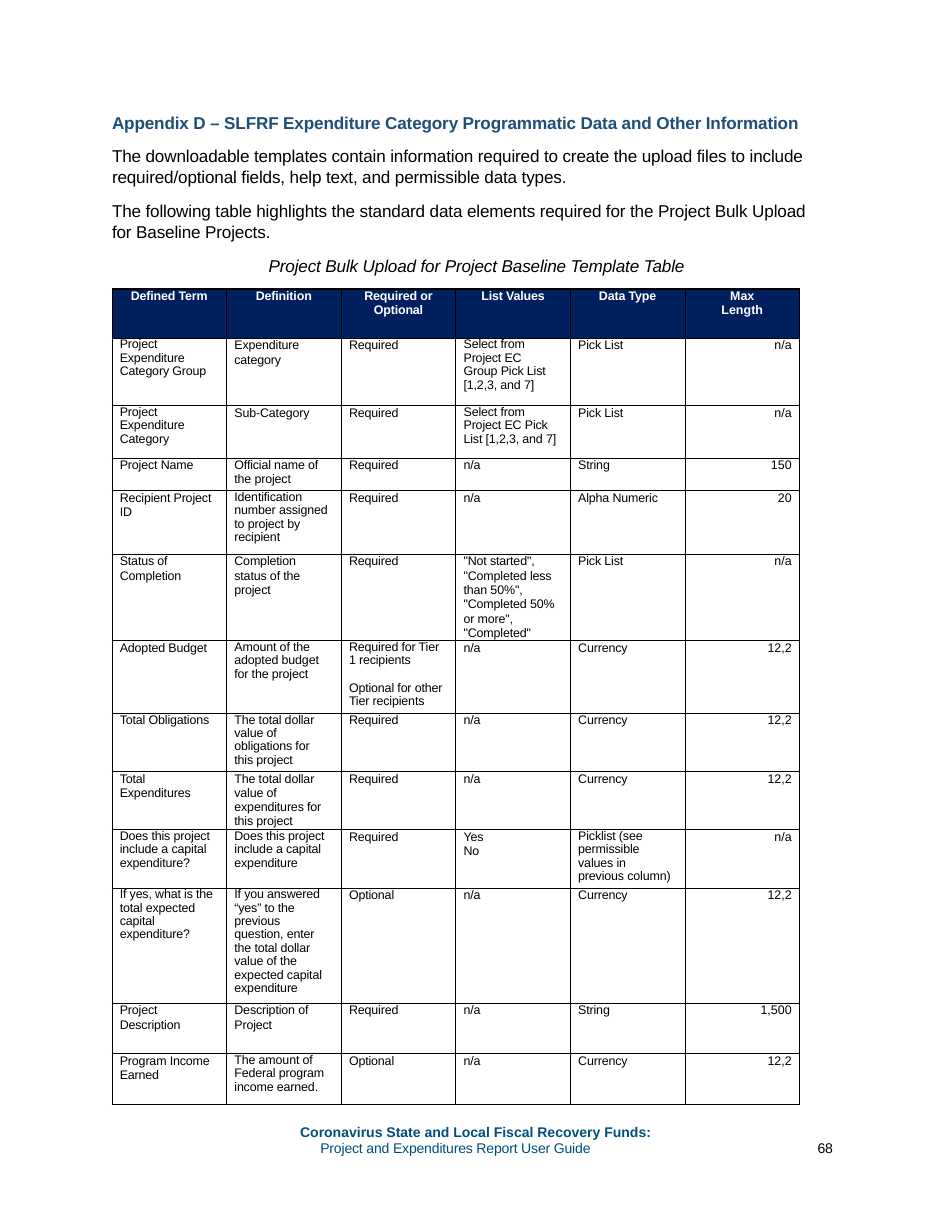
from copy import deepcopy
from pptx import Presentation, util as u
from pptx.dml.color import RGBColor
from pptx.enum import text
from pptx.oxml import parse_xml
from pptx.oxml.ns import nsdecls, qn

LEFT, CENTER, RIGHT = text.PP_ALIGN.LEFT, text.PP_ALIGN.CENTER, text.PP_ALIGN.RIGHT
COLS, ROWS, UNIT = 85, 110, u.Inches(0.1)


class Theme:
    """Colours, font and type sizes of the guide."""
    font = "Arial"
    heading, footer, header_fill = "1F4E79", "004E7C", "001F5F"
    ink, paper = "000000", "FFFFFF"
    body, note, cell = 11, 9, 8
    thin, thick = 0.5, 1


HEADING = "Appendix D – SLFRF Expenditure Category Programmatic Data and Other Information"
INTRO = [
    "The downloadable templates contain information required to create the upload files "
    "to include required/optional fields, help text, and permissible data types.",
    "The following table highlights the standard data elements required for the "
    "Project Bulk Upload for Baseline Projects.",
]
CAPTION = "Project Bulk Upload for Project Baseline Template Table"
HEADERS = ["Defined Term", "Definition", "Required or\vOptional", "List Values",
           "Data Type", "Max\vLength"]
ELEMENTS = [
    (6, ["Project\vExpenditure\vCategory Group", "Expenditure\vcategory", "Required",
         "Select from\vProject EC\vGroup Pick List\v[1,2,3, and 7]", "Pick List", "n/a"]),
    (4.7, ["Project\vExpenditure\vCategory", "Sub-Category", "Required",
           "Select from\vProject EC Pick\vList [1,2,3, and 7]", "Pick List", "n/a"]),
    (2.9, ["Project Name", "Official name of\vthe project", "Required", "n/a", "String", "150"]),
    (5.7, ["Recipient Project\vID", "Identification\vnumber assigned\vto project by\vrecipient",
           "Required", "n/a", "Alpha Numeric", "20"]),
    (7.7, ["Status of\vCompletion", "Completion\vstatus of the\vproject", "Required",
           "\"Not started\",\v\"Completed less\vthan 50%\",\n\"Completed 50%\vor more\",\n"
           "\"Completed\"", "Pick List", "n/a"]),
    (6.5, ["Adopted Budget", "Amount of the\vadopted budget\vfor the project",
           "Required for Tier\v1 recipients\nOptional for other\vTier recipients",
           "n/a", "Currency", "12,2"]),
    (5.2, ["Total Obligations", "The total dollar\vvalue of\vobligations for\vthis project",
           "Required", "n/a", "Currency", "12,2"]),
    (5.2, ["Total\vExpenditures", "The total dollar\vvalue of\vexpenditures for\vthis project",
           "Required", "n/a", "Currency", "12,2"]),
    (5.2, ["Does this project\vinclude a capital\vexpenditure?",
           "Does this project\vinclude a capital\vexpenditure", "Required", "Yes\vNo",
           "Picklist (see\vpermissible\vvalues in\vprevious column)", "n/a"]),
    (10.3, ["If yes, what is the\vtotal expected\vcapital\vexpenditure?",
            "If you answered\v“yes” to the\vprevious\vquestion, enter\vthe total dollar\v"
            "value of the\vexpected capital\vexpenditure", "Optional", "n/a", "Currency", "12,2"]),
    (4.5, ["Project\vDescription", "Description of\vProject", "Required", "n/a",
           "String", "1,500"]),
    (4.5, ["Program Income\vEarned", "The amount of\vFederal program\vincome earned.",
           "Optional", "n/a", "Currency", "12,2"]),
]


def place(box):
    """Turn a box in grid units into slide lengths."""
    return [round(v * UNIT) for v in box]


def write(p, words, size, color=Theme.ink, bold=False, italic=False, align=LEFT,
          before=0, spacing=None, indent=0, tracking=0):
    """Fill a paragraph with formatted text."""
    pPr = p._p.get_or_add_pPr()
    pPr.set("marL", str(u.Inches(indent)))
    pPr.set("indent", "0")
    p.text = words
    p.alignment, p.space_before, p.line_spacing = align, u.Pt(before), spacing
    for r in p.runs:
        f = r.font
        f.name, f.size, f.bold, f.italic = Theme.font, u.Pt(size), bold, italic
        f.color.rgb = RGBColor.from_string(color)
        if tracking:
            r._r.get_or_add_rPr().set("spc", str(tracking))
    for br in p._p.findall(qn("a:br")):
        br.append(deepcopy(p.runs[0]._r.rPr))


def frame(sp):
    """Strip a shape's margins and return its text frame."""
    tf = sp.text_frame
    tf.margin_left = tf.margin_right = tf.margin_top = tf.margin_bottom = 0
    tf.word_wrap, tf.auto_size = True, text.MSO_AUTO_SIZE.NONE
    tf.vertical_anchor = text.MSO_ANCHOR.TOP
    return tf


def add_heading(s, box):
    """Place the appendix title."""
    sp = s.shapes.title
    sp.left, sp.top, sp.width, sp.height = place(box)
    write(frame(sp).paragraphs[0], HEADING, Theme.body, Theme.heading, bold=True,
          spacing=1.0, indent=0.01, tracking=-10)


def add_intro(s, box):
    """Place the introduction and the table caption."""
    tf = frame(s.shapes.add_textbox(*place(box)))
    for i, words in enumerate(INTRO):
        p = tf.add_paragraph() if i else tf.paragraphs[0]
        write(p, words, Theme.body, spacing=1.04, before=8 if i else 0, indent=0.01,
              tracking=-10)
    write(tf.add_paragraph(), CAPTION, Theme.body, italic=True, align=CENTER,
          before=8.4, indent=0.18, tracking=-10)


def draw_borders(cell, edges):
    """Outline a cell, given a width in points for each edge."""
    tcPr = cell._tc.get_or_add_tcPr()
    for i, (edge, width) in enumerate(edges.items()):
        tcPr.insert(i, parse_xml(
            f'<a:ln{edge} {nsdecls("a")} w="{u.Pt(width)}"><a:solidFill>'
            f'<a:srgbClr val="{Theme.ink}"/></a:solidFill></a:ln{edge}>'))


def fill_cell(cell, words, header, last, exact):
    """Write and format one table cell."""
    cell.margin_top = cell.margin_bottom = cell.margin_left = cell.margin_right = 0
    if header:
        cell.fill.solid()
        cell.fill.fore_color.rgb = RGBColor.from_string(Theme.header_fill)
    else:
        cell.fill.background()
        cell.margin_left = u.Inches(0.07)
        cell.margin_right = u.Inches(0.07 if last else 0)
    align = CENTER if header else RIGHT if last else LEFT
    spacing = 0.96 if words.count("\v") > 1 and not exact else u.Pt(9.2)
    for i, part in enumerate(words.split("\n")):
        p = cell.text_frame.add_paragraph() if i else cell.text_frame.paragraphs[0]
        gap = 9.2 if i and part.startswith("Optional") else 0
        write(p, part, Theme.cell, Theme.paper if header else Theme.ink, bold=header,
              align=align, spacing=spacing, before=gap, tracking=0 if last else -10)


def add_elements_table(s, box):
    """Place the table of standard data elements."""
    rows = [(4.4, HEADERS)] + ELEMENTS
    tbl = s.shapes.add_table(len(rows), len(HEADERS), *place(box)).table
    tbl.horz_banding = False
    for col in tbl.columns:
        col.width = round(box[2] * UNIT / len(HEADERS))
    for r, (height, words) in enumerate(rows):
        tbl.rows[r].height = round(height * UNIT)
        exact = words[0].startswith(("Status", "Total\v"))
        for c, content in enumerate(words):
            cell = tbl.cell(r, c)
            fill_cell(cell, content, r == 0, c == len(HEADERS) - 1, exact)
            draw_borders(cell, {"L": Theme.thin, "R": Theme.thin,
                                "T": Theme.thick if r < 2 else Theme.thin,
                                "B": Theme.thick if r == 0 else Theme.thin})


def add_footer(s, box, number_box):
    """Place the guide's name and the page number."""
    tf = frame(s.shapes.add_textbox(*place(box)))
    write(tf.paragraphs[0], "Coronavirus State and Local Fiscal Recovery Funds:", Theme.note,
          Theme.footer, bold=True, spacing=u.Pt(10.6), indent=0.01)
    write(tf.add_paragraph(), "Project and Expenditures Report User Guide", Theme.note,
          Theme.footer, spacing=u.Pt(10.6), indent=0.19, tracking=-10)
    number = frame(s.shapes.add_textbox(*place(number_box)))
    write(number.paragraphs[0], "68", Theme.note, indent=0.04, tracking=-10)


def main():
    """Build the page and save it."""
    prs = Presentation()
    prs.slide_width, prs.slide_height = COLS * UNIT, ROWS * UNIT
    s = prs.slides.add_slide(prs.slide_layouts[5])
    add_heading(s, (9.9, 10, 63.5, 2))
    add_intro(s, (9.9, 12.9, 63.5, 11.8))
    add_elements_table(s, (10, 25.8, 61.4, 72.9))
    add_footer(s, (26.7, 100.3, 31.6, 3.1), (72.6, 101.7, 2.2, 1.7))
    prs.save("out.pptx")


if __name__ == "__main__":
    main()
